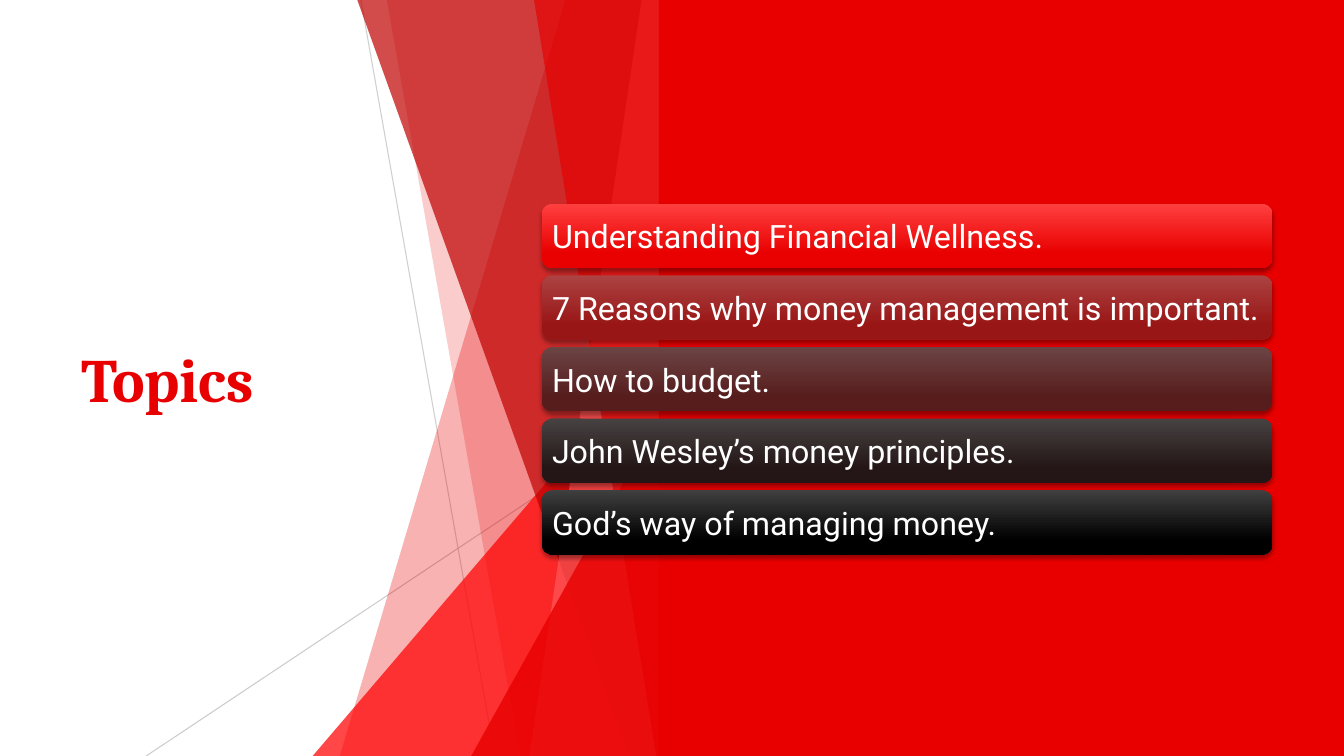
from lxml.etree import SubElement
from pptx import Presentation
from pptx.dml.color import RGBColor
from pptx.enum.shapes import MSO_CONNECTOR, MSO_SHAPE
from pptx.enum.text import MSO_ANCHOR, PP_ALIGN
from pptx.oxml.ns import qn
from pptx.util import Pt

COLORS = {
    "red": "E80000", "bright": "FF0000", "dark": "BF0000", "light": "FF5858",
    "gray": "BFBFBF", "white": "FFFFFF", "black": "000000",
}


def set_fill(shape, color, opacity=100):
    shape.shadow.inherit = False
    shape.line.fill.background()
    shape.fill.solid()
    shape.fill.fore_color.rgb = RGBColor.from_string(COLORS[color])
    if opacity < 100:
        tint = shape.fill._xPr.find(".//" + qn("a:srgbClr"))
        SubElement(tint, qn("a:alpha"), val=str(opacity * 1000))


def write_text(frame, text, font, size, color, bold=False):
    frame.word_wrap = True
    frame.vertical_anchor = MSO_ANCHOR.MIDDLE
    para = frame.paragraphs[0]
    para.alignment = PP_ALIGN.LEFT
    span = para.add_run()
    span.text = text
    span.font.name = font
    span.font.size = Pt(size)
    span.font.bold = bold
    span.font.color.rgb = RGBColor.from_string(COLORS[color])


deck = Presentation()
deck.slide_width = Pt(960)
deck.slide_height = Pt(540)
page = deck.slides.add_slide(deck.slide_layouts[6])

title = page.shapes.add_textbox(Pt(51), Pt(108.7), Pt(279.4), Pt(322.6))
write_text(title.text_frame, "Topics", "Cambria", 44, "red", True)

for x1, y1, x2, y2, opacity in [(257.8, 0, 353.5, 540, 75), (479.6, 290.2, 104.4, 540, 80)]:
    ray = page.shapes.add_connector(MSO_CONNECTOR.STRAIGHT, Pt(x1), Pt(y1), Pt(x2), Pt(y2))
    ray.line.width = Pt(0.75)
    ray.line.color.rgb = RGBColor.from_string(COLORS["gray"])
    tint = ray._element.spPr.find(".//" + qn("a:srgbClr"))
    SubElement(tint, qn("a:alpha"), val=str(opacity * 1000))
    SubElement(ray._element.spPr, qn("a:effectLst"))

RIGHT = 479.7
FACETS = [
    ("band", 404, 242.7, "red", 30),
    ("band", 276.2, 371.6, "red", 20),
    ("triangle", 240, 223.3, "bright", 72),
    ("band", 255, 449.4, "dark", 70),
    ("band", 458.4, 378.2, "light", 70),
    ("band", 381.4, 468.8, "red", 65),
    ("triangle", 283, 336.6, "red", 80),
]
for kind, top, left, color, opacity in FACETS:
    if kind == "band":
        outline = page.shapes.build_freeform(Pt(top), Pt(-0.6))
        outline.add_line_segments(
            [(Pt(RIGHT), Pt(-0.6)), (Pt(RIGHT), Pt(540)), (Pt(left), Pt(540))], close=True)
        facet = outline.convert_to_shape()
    else:
        facet = page.shapes.add_shape(
            MSO_SHAPE.ISOSCELES_TRIANGLE, Pt(left), Pt(top), Pt(RIGHT - left), Pt(540 - top))
        facet.adjustments[0] = 1
    set_fill(facet, color, opacity)

panel = page.shapes.add_shape(MSO_SHAPE.RECTANGLE, Pt(470.7), Pt(0), Pt(489.3), Pt(540))
set_fill(panel, "red")

TOPICS = [
    ("Understanding Financial Wellness.", "FF3F3F", "E90000"),
    ("7 Reasons why money management is important.", "AC4242", "991616"),
    ("How to budget.", "6C4444", "571D1D"),
    ("John Wesley’s money principles.", "474242", "241616"),
    ("God’s way of managing money.", "3F3F3F", "000000"),
]
for index, (topic, upper, lower) in enumerate(TOPICS):
    bar = page.shapes.add_shape(
        MSO_SHAPE.ROUNDED_RECTANGLE, Pt(387.1), Pt(145.5 + index * 51.15), Pt(521.8), Pt(46))
    bar.line.fill.background()
    bar.fill.gradient()
    bar.fill.gradient_angle = 270
    for stop, color, position in zip(bar.fill.gradient_stops, (upper, lower), (0, 0.78)):
        stop.color.rgb = RGBColor.from_string(color)
        stop.position = position
    bar.shadow.inherit = False
    effects = bar._element.spPr.find(qn("a:effectLst"))
    shadow = SubElement(effects, qn("a:outerShdw"), blurRad=str(Pt(3)), dist=str(Pt(2)),
                        dir="5400000", rotWithShape="0")
    shade = SubElement(shadow, qn("a:srgbClr"), val=COLORS["black"])
    SubElement(shade, qn("a:alpha"), val="35000")
    frame = bar.text_frame
    frame.margin_left = Pt(5)
    frame.margin_right = Pt(2)
    write_text(frame, topic, "Roboto", 23, "white")

deck.save("out.pptx")
